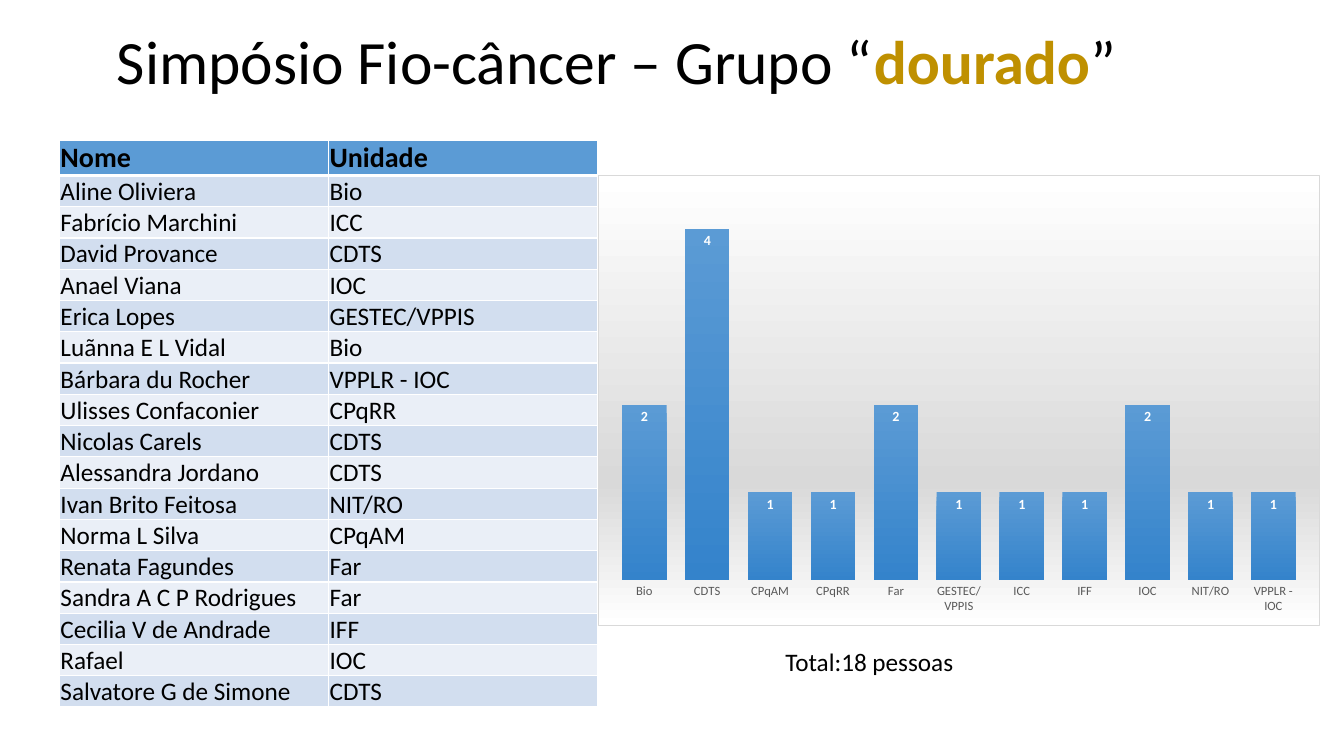
from collections import Counter

from lxml import etree
from pptx import Presentation
from pptx.chart.data import CategoryChartData
from pptx.dml.color import RGBColor
from pptx.enum import chart as ch, text
from pptx.oxml import parse_xml
from pptx.oxml.ns import nsdecls, qn
from pptx.util import Inches, Pt

BLACK = RGBColor(0, 0, 0)
WHITE = RGBColor(255, 255, 255)
GOLD = RGBColor(0xBF, 0x90, 0x00)
BLUE = RGBColor(0x5B, 0x9B, 0xD5)
DEEP_BLUE = RGBColor(0x34, 0x83, 0xCB)
BANDS = (RGBColor(0xD2, 0xDE, 0xEF), RGBColor(0xEA, 0xEF, 0xF7))
GRAY = RGBColor(0xD9, 0xD9, 0xD9)
LABEL_GRAY = RGBColor(0x59, 0x59, 0x59)
FONT = "Calibri"

TITLE = [("Simpósio Fio-câncer – Grupo “", {}),
         ("dourado", {"color": GOLD, "bold": True, "outline": 1.75}),
         ("”", {})]
TOTAL = "Total:18 pessoas"
HEADER = ("Nome", "Unidade")
MEMBERS = [
    ("Aline Oliviera", "Bio"),
    ("Fabrício Marchini", "ICC"),
    ("David Provance", "CDTS"),
    ("Anael Viana", "IOC"),
    ("Erica Lopes", "GESTEC/VPPIS"),
    ("Luãnna E L Vidal", "Bio"),
    ("Bárbara du Rocher", "VPPLR - IOC"),
    ("Ulisses Confaconier", "CPqRR"),
    ("Nicolas Carels", "CDTS"),
    ("Alessandra Jordano", "CDTS"),
    ("Ivan Brito Feitosa", "NIT/RO"),
    ("Norma L Silva", "CPqAM"),
    ("Renata Fagundes", "Far"),
    ("Sandra A C P Rodrigues", "Far"),
    ("Cecilia V de Andrade", "IFF"),
    ("Rafael", "IOC"),
    ("Salvatore G de Simone", "CDTS"),
]
PLOT_LAYOUT = {"x": 0.02, "y": 0.02, "w": 0.96, "h": 0.88}


def set_font(font, size, color=BLACK, bold=False):
    font.name, font.size, font.bold = FONT, Pt(size), bold
    font.color.rgb = color


def add_text(p, words, size=18, color=BLACK, bold=False, outline=0):
    r = p.add_run()
    r.text = words
    set_font(r.font, size, color, bold)
    if outline:
        r.font._element.insert(0, line_xml("ln", outline, color))


def line_xml(tag, width, color):
    return parse_xml(
        f'<a:{tag} {nsdecls("a")} w="{int(Pt(width))}"><a:solidFill>'
        f'<a:srgbClr val="{color}"/></a:solidFill></a:{tag}>')


def gradient_xml(stops):
    marks = "".join(f'<a:gs pos="{pos * 1000}"><a:srgbClr val="{color}"/></a:gs>'
                    for pos, color in stops)
    return parse_xml(f'<a:gradFill {nsdecls("a")} rotWithShape="1"><a:gsLst>{marks}'
                     '</a:gsLst><a:lin ang="5400000" scaled="0"/></a:gradFill>')


def add_box(s, left, top, width, height, wrap):
    tf = s.shapes.add_textbox(*map(Inches, (left, top, width, height))).text_frame
    tf.word_wrap = wrap
    return tf


def add_member_table(s):
    rows = [HEADER] + MEMBERS
    heights = [0.35] + [0.31] * len(MEMBERS)
    table = s.shapes.add_table(len(rows), 2, Inches(0.59), Inches(1.39),
                               Inches(5.34), Inches(sum(heights))).table
    for col in table.columns:
        col.width = Inches(2.67)
    for i, (row, height) in enumerate(zip(rows, heights)):
        table.rows[i].height = Inches(height)
        for j, words in enumerate(row):
            cell = table.cell(i, j)
            cell.margin_left = cell.margin_top = cell.margin_right = Inches(0.01)
            cell.margin_bottom = 0
            cell.vertical_anchor = text.MSO_ANCHOR.BOTTOM
            add_text(cell.text_frame.paragraphs[0], words,
                     size=18 if i else 20, bold=i == 0)
            tc_pr = cell._tc.get_or_add_tcPr()
            for side in "LRTB":
                thick = (i == 0 and side == "B") or (i == 1 and side == "T")
                tc_pr.append(line_xml("ln" + side, 3 if thick else 1, WHITE))
            cell.fill.solid()
            cell.fill.fore_color.rgb = BANDS[(i - 1) % 2] if i else BLUE


def add_unit_chart(s):
    units = sorted(Counter(unit for _, unit in MEMBERS).items())
    data = CategoryChartData()
    data.categories = [unit for unit, _ in units]
    data.add_series("Series 1", [count for _, count in units])
    chart = s.shapes.add_chart(ch.XL_CHART_TYPE.COLUMN_CLUSTERED, Inches(5.93),
                               Inches(1.74), Inches(7.16), Inches(4.47), data).chart
    chart.has_legend = chart.has_title = False
    set_font(chart.font, 10)

    axis = chart.category_axis
    axis.major_tick_mark = ch.XL_TICK_MARK.NONE
    axis.format.line.fill.background()
    set_font(axis.tick_labels.font, 9, LABEL_GRAY)
    values = chart.value_axis
    values.visible = values.has_major_gridlines = False
    values.minimum_scale, values.maximum_scale = 0, 4.5

    plot = chart.plots[0]
    plot.gap_width, plot.vary_by_categories = 41, False
    bars = plot.series[0]
    bars.format.fill.background()
    bar_pr = bars._element.find(qn("c:spPr"))
    bar_pr.replace(bar_pr.find(qn("a:noFill")),
                   gradient_xml([(0, BLUE), (100, DEEP_BLUE)]))
    labels = bars.data_labels
    labels.show_value = True
    labels.position = ch.XL_LABEL_POSITION.INSIDE_END
    set_font(labels.font, 10, WHITE, True)

    area = parse_xml(f'<c:spPr {nsdecls("c", "a")}/>')
    area.append(gradient_xml([(0, WHITE), (68, GRAY), (100, WHITE)]))
    area.append(line_xml("ln", 0.75, GRAY))
    body = chart._chartSpace.find(qn("c:chart"))
    body.addnext(area)

    plot_area = body.find(qn("c:plotArea"))
    for old in plot_area.findall(qn("c:layout")):
        plot_area.remove(old)
    layout = parse_xml(f'<c:layout {nsdecls("c")}><c:manualLayout/></c:layout>')
    plot_area.insert(0, layout)
    settings = {"layoutTarget": "inner", "xMode": "edge", "yMode": "edge", **PLOT_LAYOUT}
    for name, value in settings.items():
        etree.SubElement(layout[0], qn("c:" + name)).set("val", str(value))


def main():
    prs = Presentation()
    prs.slide_width, prs.slide_height = Inches(13.33), Inches(7.5)
    s = prs.slides.add_slide(prs.slide_layouts[6])

    tf = add_box(s, 1.06, 0.14, 11.8, 1, True)
    tf.vertical_anchor = text.MSO_ANCHOR.MIDDLE
    p = tf.paragraphs[0]
    p.line_spacing = 0.9
    for words, look in TITLE:
        add_text(p, words, size=44, **look)

    add_member_table(s)
    add_unit_chart(s)
    tf = add_box(s, 7.69, 6.36, 1.94, 0.4, False)
    tf.auto_size = text.MSO_AUTO_SIZE.SHAPE_TO_FIT_TEXT
    add_text(tf.paragraphs[0], TOTAL)
    prs.save("out.pptx")


if __name__ == "__main__":
    main()
